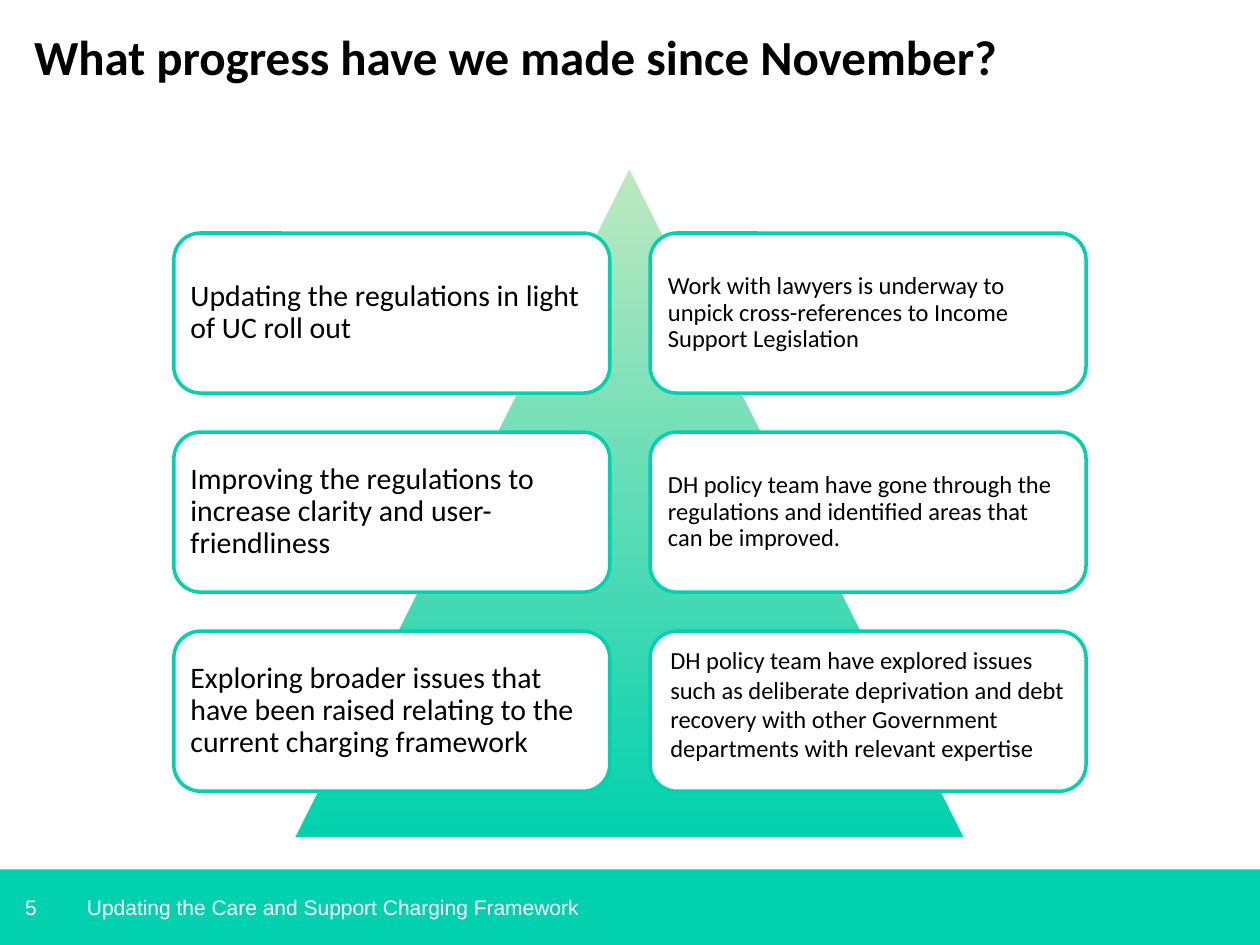
"""Build the slide on progress made since November with the charging regulations."""
from pptx import Presentation
from pptx.dml.color import RGBColor
from pptx.enum.shapes import MSO_SHAPE
from pptx.enum.text import MSO_ANCHOR, PP_ALIGN
from pptx.util import Inches, Pt

COLOURS = {"teal": "01D1AE", "mint": "BFE9BF", "white": "FFFFFF", "black": "000000"}
COLUMNS = [1.38, 5.16]
TOP_ROW, ROW_STEP = 1.85, 1.58
CARD_WIDTH, CARD_HEIGHT = 3.46, 1.27
FOOTER_TOP, FOOTER_HEIGHT = 6.9, 0.6

PROGRESS = [
    ("Updating the regulations in light of UC roll out",
     "Work with lawyers is underway to unpick cross-references to Income Support Legislation"),
    ("Improving the regulations to increase clarity and user-friendliness",
     "DH policy team have gone through the regulations and identified areas that can be improved."),
    ("Exploring broader issues that have been raised relating to the current charging framework",
     "DH policy team have explored issues such as deliberate deprivation and debt recovery "
     "with other Government departments with relevant expertise"),
]


def colour(name):
    return RGBColor.from_string(COLOURS[name])


def write(holder, text, size, font, ink, anchor=MSO_ANCHOR.MIDDLE, margins=(0, 0, 0, 0),
          bold=False, wrap=True, spacing=1.0):
    frame = holder.text_frame
    frame.word_wrap = wrap
    frame.vertical_anchor = anchor
    frame.margin_left, frame.margin_top, frame.margin_right, frame.margin_bottom = map(Inches, margins)
    paragraph = frame.paragraphs[0]
    paragraph.alignment = PP_ALIGN.LEFT
    paragraph.line_spacing = spacing
    run = paragraph.add_run()
    run.text = text
    run.font.size = Pt(size)
    run.font.name = font
    run.font.bold = bold
    run.font.color.rgb = colour(ink)


deck = Presentation()
deck.slide_width, deck.slide_height = Inches(10), Inches(7.5)
shapes = deck.slides.add_slide(deck.slide_layouts[6]).shapes

footer = shapes.add_shape(MSO_SHAPE.RECTANGLE, 0, Inches(FOOTER_TOP), deck.slide_width, Inches(FOOTER_HEIGHT))
footer.shadow.inherit = False
footer.fill.solid()
footer.fill.fore_color.rgb = colour("teal")
footer.line.fill.background()

for left, width, inset, words in [
    (0, 0.59, 0.2, "5"),
    (0.69, 8.62, 0, "Updating the Care and Support Charging Framework"),
]:
    footer_text = shapes.add_textbox(Inches(left), Inches(FOOTER_TOP), Inches(width), Inches(FOOTER_HEIGHT))
    write(footer_text, words, 12, "Arial", "white", margins=(inset, 0, 0, 0))

title = shapes.add_textbox(Inches(0.27), Inches(0.21), Inches(8.62), Inches(0.79))
write(title, "What progress have we made since November?", 28, "Calibri", "black",
      anchor=MSO_ANCHOR.TOP, bold=True, wrap=False)

pyramid = shapes.add_shape(MSO_SHAPE.ISOSCELES_TRIANGLE, Inches(2.32), Inches(1.31), Inches(5.35), Inches(5.35))
pyramid.shadow.inherit = False
pyramid.fill.gradient()
pyramid.fill.gradient_angle = 270
for stop, name in zip(pyramid.fill.gradient_stops, ["mint", "teal"]):
    stop.color.rgb = colour(name)
pyramid.line.color.rgb = colour("white")
pyramid.line.width = Pt(2)

for row, pair in enumerate(PROGRESS):
    for column, (left, words) in enumerate(zip(COLUMNS, pair)):
        card = shapes.add_shape(MSO_SHAPE.ROUNDED_RECTANGLE, Inches(left), Inches(TOP_ROW + row * ROW_STEP),
                                Inches(CARD_WIDTH), Inches(CARD_HEIGHT))
        card.shadow.inherit = False
        card.fill.solid()
        card.fill.fore_color.rgb = colour("white")
        card.line.color.rgb = colour("teal")
        card.line.width = Pt(2)
        size = [17, 14][column]
        if (row, column) == (2, 1):
            write(card, words, size, "Calibri", "black", anchor=MSO_ANCHOR.TOP, margins=(0.1, 0.05, 0.09, 0.05))
        else:
            write(card, words, size, "Calibri", "black", margins=([0.07, 0.08][column],) * 4, spacing=0.9)

deck.save("out.pptx")
